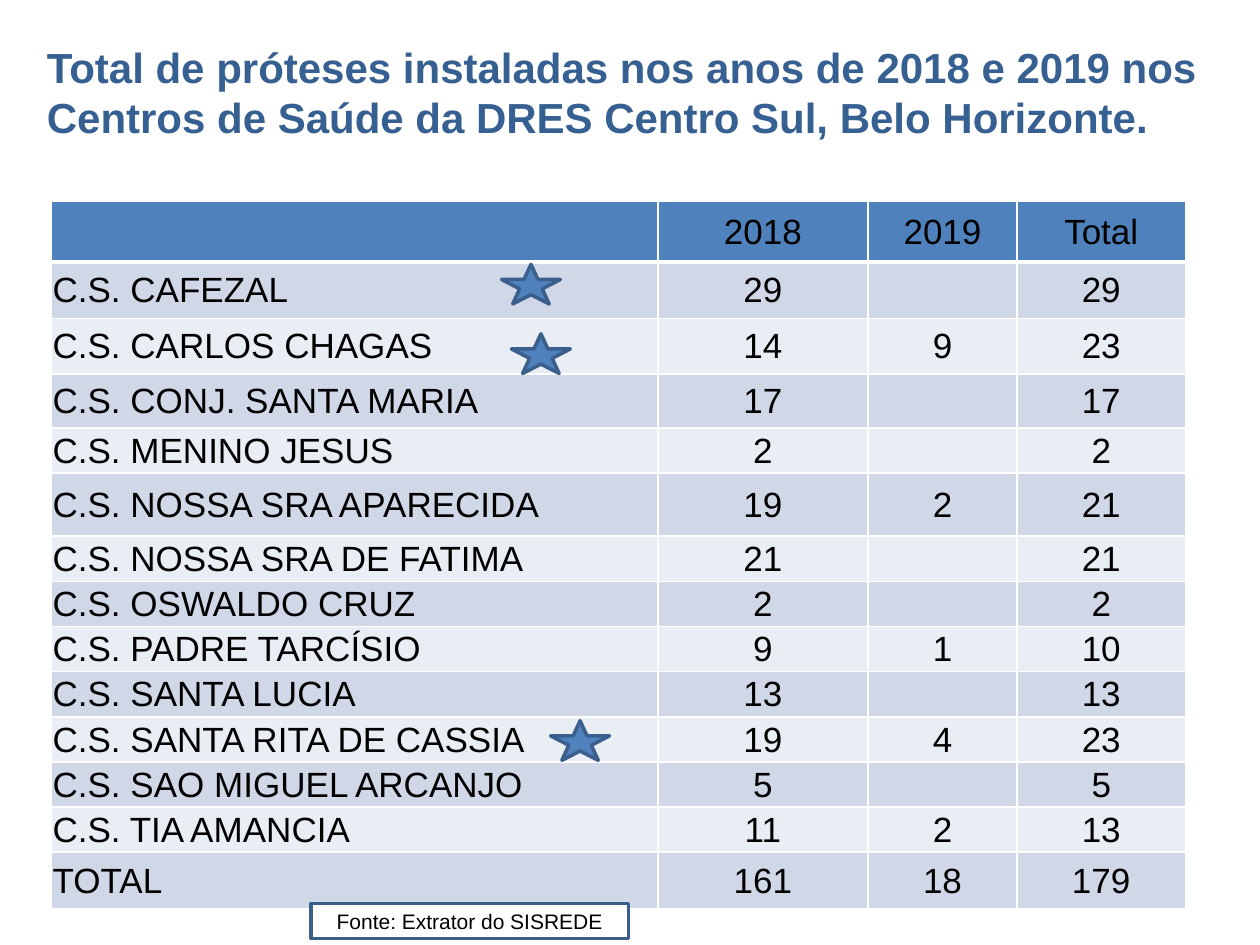
from lxml.etree import SubElement
from pptx import Presentation
from pptx.dml.color import RGBColor
from pptx.enum.shapes import MSO_SHAPE as Shape
from pptx.enum.text import MSO_ANCHOR as Anchor, PP_ALIGN as Align
from pptx.oxml.ns import qn
from pptx.util import Cm, Pt

BLUE = RGBColor(0x4F, 0x81, 0xBD)
TITLE_BLUE = RGBColor(0x37, 0x60, 0x92)
OUTLINE_BLUE = RGBColor(0x3A, 0x5F, 0x8C)
DARK_BAND = RGBColor(0xD0, 0xD8, 0xE8)
LIGHT_BAND = RGBColor(0xE9, 0xED, 0xF4)
WHITE = RGBColor(0xFF, 0xFF, 0xFF)
BLACK = RGBColor(0x00, 0x00, 0x00)

# Health centre, 2018, 2019, row height in cm
CENTRES = [
    ("C.S. CAFEZAL", 29, 0, 1.14),
    ("C.S. CARLOS CHAGAS", 14, 9, 1.12),
    ("C.S. CONJ. SANTA MARIA", 17, 0, 1.09),
    ("C.S. MENINO JESUS", 2, 0, 0.91),
    ("C.S. NOSSA SRA APARECIDA", 19, 2, 1.27),
    ("C.S. NOSSA SRA DE FATIMA", 21, 0, 0.91),
    ("C.S. OSWALDO CRUZ", 2, 0, 0.91),
    ("C.S. PADRE TARCÍSIO", 9, 1, 0.91),
    ("C.S. SANTA LUCIA", 13, 0, 0.91),
    ("C.S. SANTA RITA DE CASSIA", 19, 4, 0.91),
    ("C.S. SAO MIGUEL ARCANJO", 5, 0, 0.91),
    ("C.S. TIA AMANCIA", 11, 2, 0.91),
]
COLUMN_WIDTHS = [12.22, 4.24, 3, 3.4]
STAR_POSITIONS = [(10.11, 5.33), (11.1, 14.53), (10.31, 6.73)]


def format_text(paragraph, size, color, bold=False):
    for run in paragraph.runs:
        run.font.name = "Arial"
        run.font.size = Pt(size)
        run.font.bold = bold
        run.font.color.rgb = color


def add_border(cell, side, width):
    """Draw a white line on one side (L, R, T or B) of a cell."""
    line = SubElement(cell._tc.get_or_add_tcPr(), qn(f"a:ln{side}"), w=str(Pt(width)))
    fill = SubElement(line, qn("a:solidFill"))
    SubElement(fill, qn("a:srgbClr"), val=str(WHITE))


presentation = Presentation()
presentation.slide_width = Cm(25.4)
presentation.slide_height = Cm(19.05)
slide = presentation.slides.add_slide(presentation.slide_layouts[5])

# Table
total_2018 = sum(centre[1] for centre in CENTRES)
total_2019 = sum(centre[2] for centre in CENTRES)
rows = [("", "2018", "2019", "Total")]
for name, in_2018, in_2019, _ in CENTRES + [("TOTAL", total_2018, total_2019, None)]:
    rows.append((name, str(in_2018), str(in_2019 or ""), str(in_2018 + in_2019)))
row_heights = [1.22] + [centre[3] for centre in CENTRES] + [1.14]

table = slide.shapes.add_table(
    len(rows), len(COLUMN_WIDTHS), Cm(1.04), Cm(4.06),
    Cm(sum(COLUMN_WIDTHS)), Cm(sum(row_heights))).table
for column, width in zip(table.columns, COLUMN_WIDTHS):
    column.width = Cm(width)
for row_index, (values, height) in enumerate(zip(rows, row_heights)):
    table.rows[row_index].height = Cm(height)
    is_header = row_index == 0
    band = BLUE if is_header else DARK_BAND if row_index % 2 else LIGHT_BAND
    for column_index, value in enumerate(values):
        cell = table.cell(row_index, column_index)
        cell.margin_left = cell.margin_right = cell.margin_top = Cm(0.02)
        cell.margin_bottom = 0
        cell.vertical_anchor = Anchor.MIDDLE
        for side in "LRTB":
            thick = (is_header and side == "B") or (row_index == 1 and side == "T")
            add_border(cell, side, 3 if thick else 1)
        cell.fill.solid()
        cell.fill.fore_color.rgb = band
        paragraph = cell.text_frame.paragraphs[0]
        paragraph.text = value
        paragraph.alignment = Align.CENTER if column_index else Align.LEFT
        format_text(paragraph, 20, BLACK)

# Title
title = slide.shapes.title
title.left, title.top, title.width, title.height = Cm(0.69), Cm(0.71), Cm(23.8), Cm(2.31)
title.text_frame.text = (
    "Total de próteses instaladas nos anos de 2018 e 2019 nos "
    "Centros de Saúde da DRES Centro Sul, Belo Horizonte.")
title.text_frame.vertical_anchor = Anchor.TOP
title.text_frame.paragraphs[0].alignment = Align.LEFT
format_text(title.text_frame.paragraphs[0], 24, TITLE_BLUE, bold=True)

# Stars and source box
stars = [slide.shapes.add_shape(Shape.STAR_5_POINT, Cm(left), Cm(top), Cm(1.19), Cm(0.8))
         for left, top in STAR_POSITIONS]
source = slide.shapes.add_shape(Shape.RECTANGLE, Cm(6.27), Cm(18.21), Cm(6.4), Cm(0.71))
for shape in stars + [source]:
    shape.shadow.inherit = False
    shape.fill.solid()
    shape.fill.fore_color.rgb = WHITE if shape is source else BLUE
    shape.line.color.rgb = OUTLINE_BLUE
    shape.line.width = Pt(2)
source.text_frame.text = "Fonte: Extrator do SISREDE"
source.text_frame.vertical_anchor = Anchor.MIDDLE
source.text_frame.paragraphs[0].alignment = Align.CENTER
format_text(source.text_frame.paragraphs[0], 12, BLACK)

presentation.save("out.pptx")
